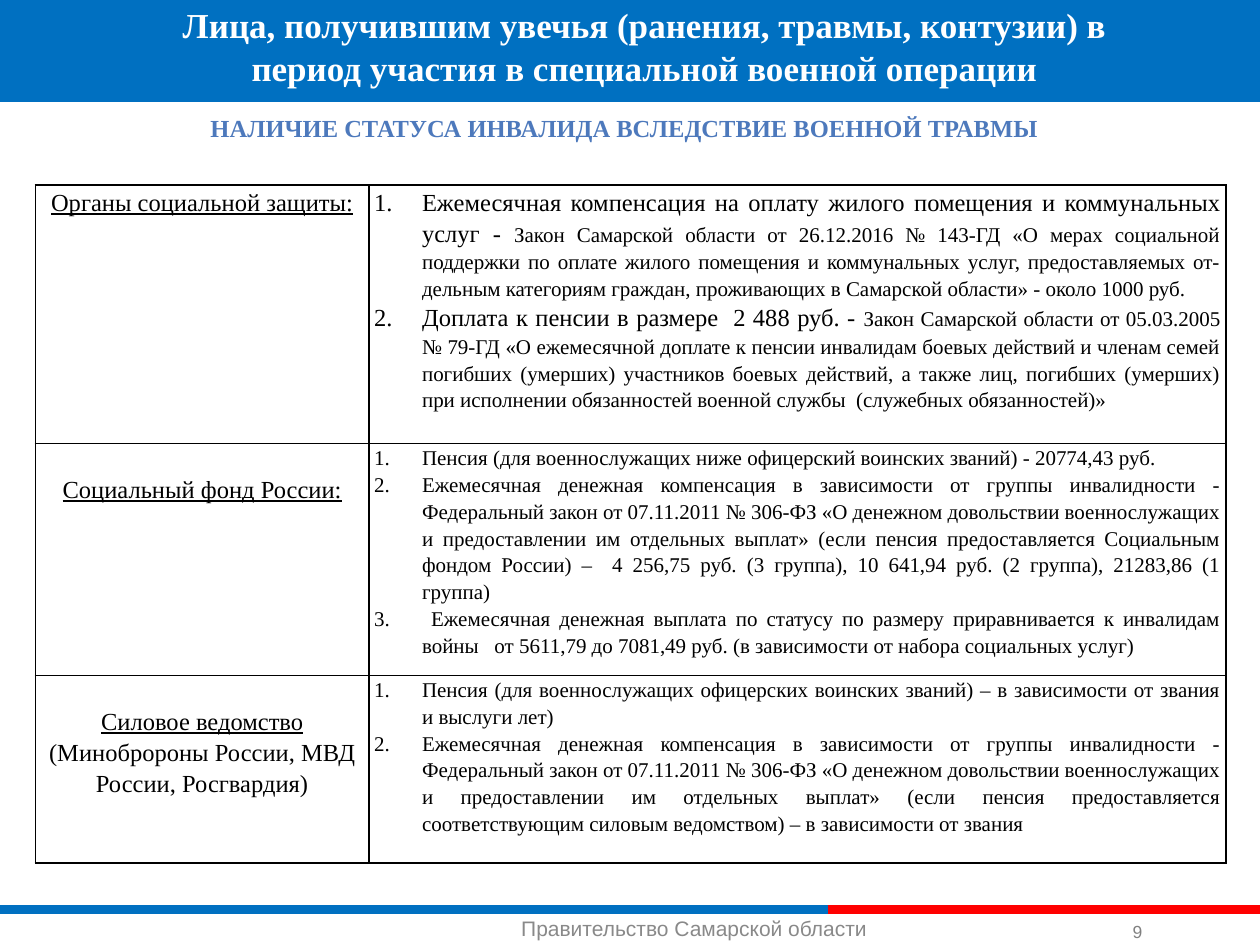
from dataclasses import dataclass

from lxml.etree import SubElement
from pptx import Presentation
from pptx.dml.color import RGBColor
from pptx.enum.shapes import MSO_CONNECTOR, MSO_SHAPE
from pptx.enum.text import MSO_ANCHOR, PP_ALIGN
from pptx.oxml import parse_xml
from pptx.oxml.ns import nsdecls, qn
from pptx.util import Inches, Pt


@dataclass(frozen=True)
class Theme:
    """Colours, fonts and type sizes of the slide."""
    blue: str = "0070C1"
    red: str = "FF0000"
    white: str = "FFFFFF"
    black: str = "000000"
    heading: str = "4D79BC"
    footer: str = "898989"
    number: str = "808080"
    serif: str = "Times New Roman"
    sans: str = "Arial"
    title_size: int = 20
    lead_size: int = 14
    body_size: int = 12
    number_size: int = 10
    spacing: float = 1.15


class SlideBuilder:
    """Draws the elements of one page in one theme."""

    def __init__(self, page, theme):
        """Keep the page and the theme."""
        self.page = page
        self.theme = theme

    def style(self, span, size, color, face, bold=False, underline=False):
        """Format one run."""
        span.font.size = Pt(size)
        span.font.name = face
        span.font.bold = bold
        span.font.underline = underline
        span.font.color.rgb = RGBColor.from_string(color)

    def band(self, left, top, width, height, color):
        """Add a plain filled rectangle."""
        shape = self.page.shapes.add_shape(
            MSO_SHAPE.RECTANGLE, Inches(left), Inches(top), Inches(width), Inches(height))
        shape.shadow.inherit = False
        shape.fill.solid()
        shape.fill.fore_color.rgb = RGBColor.from_string(color)
        shape.line.fill.background()

    def rule(self, start, end, top, color):
        """Add a thick horizontal line."""
        line = self.page.shapes.add_connector(
            MSO_CONNECTOR.STRAIGHT, Inches(start), Inches(top), Inches(end), Inches(top))
        line.line.color.rgb = RGBColor.from_string(color)
        line.line.width = Pt(5)
        SubElement(line._element.spPr, qn("a:effectLst"))

    def text(self, content, left, top, width, height, size, color, face, bold=False,
             align=PP_ALIGN.CENTER, anchor=MSO_ANCHOR.TOP, wrap=True, inset=0.05):
        """Add a text box with one paragraph."""
        box = self.page.shapes.add_textbox(
            Inches(left), Inches(top), Inches(width), Inches(height))
        frame = box.text_frame
        frame.word_wrap = wrap
        frame.vertical_anchor = anchor
        frame.margin_left = frame.margin_right = Inches(inset)
        frame.margin_top = frame.margin_bottom = Inches(0.05)
        frame.text = content
        para = frame.paragraphs[0]
        para.alignment = align
        self.style(para.runs[0], size, color, face, bold)

    def borders(self, cell):
        """Draw a thin line on each side of a cell."""
        properties = cell._tc.get_or_add_tcPr()
        for position, side in enumerate("LRTB"):
            properties.insert(position, parse_xml(
                f'<a:ln{side} {nsdecls("a")} w="12700"><a:solidFill>'
                f'<a:srgbClr val="{self.theme.black}"/></a:solidFill></a:ln{side}>'))

    def number(self, para):
        """Turn a paragraph into a numbered item."""
        properties = para._p.get_or_add_pPr()
        properties.set("marL", str(Inches(0.38)))
        properties.set("indent", str(-Inches(0.38)))
        SubElement(properties, qn("a:buFont"), typeface="+mj-lt")
        SubElement(properties, qn("a:buAutoNum"), type="arabicPeriod")

    def cell(self, cell, items, align, top=0, numbered=False):
        """Fill a cell with paragraphs of (text, size, underline) runs."""
        cell.fill.background()
        self.borders(cell)
        cell.margin_left = cell.margin_right = Inches(0.04)
        cell.margin_top, cell.margin_bottom = Inches(top), 0
        frame = cell.text_frame
        for index, runs in enumerate(items):
            para = frame.add_paragraph() if index else frame.paragraphs[0]
            if numbered:
                self.number(para)
            para.alignment = align
            para.line_spacing = self.theme.spacing
            for content, size, underline in runs:
                span = para.add_run()
                span.text = content
                self.style(span, size, self.theme.black, self.theme.serif,
                           underline=underline)

    def table(self, rows, left, top, widths, heights):
        """Add the table of agencies and their payments."""
        grid = self.page.shapes.add_table(
            len(rows), len(widths), Inches(left), Inches(top),
            Inches(sum(widths)), Inches(sum(heights))).table
        grid.first_row = grid.horz_banding = False
        for column, width in zip(grid.columns, widths):
            column.width = Inches(width)
        for index, (agency, offset, payments) in enumerate(rows):
            grid.rows[index].height = Inches(heights[index])
            self.cell(grid.cell(index, 0), [agency], PP_ALIGN.CENTER, top=offset)
            self.cell(grid.cell(index, 1), payments, PP_ALIGN.JUSTIFY, numbered=True)


def agency_rows(theme):
    """Return agency runs, top offset and payment items for each row."""
    def lead(content, underline=False):
        """Return a large run."""
        return content, theme.lead_size, underline

    def body(content):
        """Return a small run."""
        return content, theme.body_size, False

    compensation = (
        "Ежемесячная денежная компенсация в зависимости от группы инвалидности - "
        "Федеральный закон от 07.11.2011 № 306-ФЗ «О денежном довольствии военнослужащих "
        "и предоставлении им отдельных выплат» (если пенсия предоставляется ")
    return [
        ([lead("Органы социальной защиты:", True)], 0, [
            [lead("Ежемесячная компенсация на оплату жилого помещения и коммунальных услуг - "),
             body("Закон Самарской области от 26.12.2016 № 143-ГД «О мерах социальной "
                  "поддержки по оплате жилого помещения и коммунальных услуг, "
                  "предоставляемых от-дельным категориям граждан, проживающих в "
                  "Самарской области» - около 1000 руб.")],
            [lead("Доплата к пенсии в размере  2 488 руб. - "),
             body("Закон Самарской области от 05.03.2005 № 79-ГД «О ежемесячной доплате к "
                  "пенсии инвалидам боевых действий и членам семей погибших (умерших) "
                  "участников боевых действий, а также лиц, погибших (умерших) при "
                  "исполнении обязанностей военной службы  (служебных обязанностей)»")]]),
        ([lead("Социальный фонд России:", True)], 0.23, [
            [body("Пенсия (для военнослужащих ниже офицерский воинских званий) - "
                  "20774,43 руб.")],
            [body(compensation + "Социальным фондом России) –  4 256,75 руб. (3 группа), "
                  "10 641,94 руб. (2 группа), 21283,86 (1 группа)")],
            [body(" Ежемесячная денежная выплата по статусу по размеру приравнивается к "
                  "инвалидам войны   от 5611,79 до 7081,49 руб. (в зависимости от набора "
                  "социальных услуг)")]]),
        ([lead("Силовое ведомство ", True),
          lead("(Минобророны России, МВД России, Росгвардия)")], 0.23, [
            [body("Пенсия (для военнослужащих офицерских воинских званий) – в зависимости "
                  "от звания и выслуги лет)")],
            [body(compensation + "соответствующим силовым ведомством) – в зависимости "
                  "от звания")]]),
    ]


def main():
    """Build and save the deck."""
    theme = Theme()
    deck = Presentation()
    deck.slide_width, deck.slide_height = Inches(10), Inches(7.5)
    builder = SlideBuilder(deck.slides.add_slide(deck.slide_layouts[6]), theme)
    builder.rule(0, 6.57, 7.22, theme.blue)
    builder.text("Правительство Самарской области", 2.24, 7.22, 6.54, 0.29,
                 theme.body_size, theme.footer, theme.sans)
    builder.rule(6.57, 10, 7.22, theme.red)
    builder.band(0, -0.03, 10, 0.84, theme.blue)
    builder.text("Лица, получившим увечья (ранения, травмы, контузии) в период участия "
                 "в специальной военной операции", 1.14, -0.04, 7.95, 0.81,
                 theme.title_size, theme.white, theme.serif, bold=True,
                 anchor=MSO_ANCHOR.MIDDLE)
    builder.text("9", 8.94, 7.26, 0.27, 0.27, theme.number_size, theme.number, theme.sans,
                 align=PP_ALIGN.LEFT, anchor=MSO_ANCHOR.BOTTOM, wrap=False)
    builder.table(agency_rows(theme), 0.28, 1.47, [2.65, 6.8], [2.05, 1.74, 1.49])
    builder.text("НАЛИЧИЕ СТАТУСА ИНВАЛИДА ВСЛЕДСТВИЕ ВОЕННОЙ ТРАВМЫ", 1.48, 0.85, 6.95, 0.37,
                 theme.lead_size, theme.heading, theme.serif, bold=True, wrap=False,
                 inset=0.1)
    deck.save("out.pptx")


if __name__ == "__main__":
    main()
